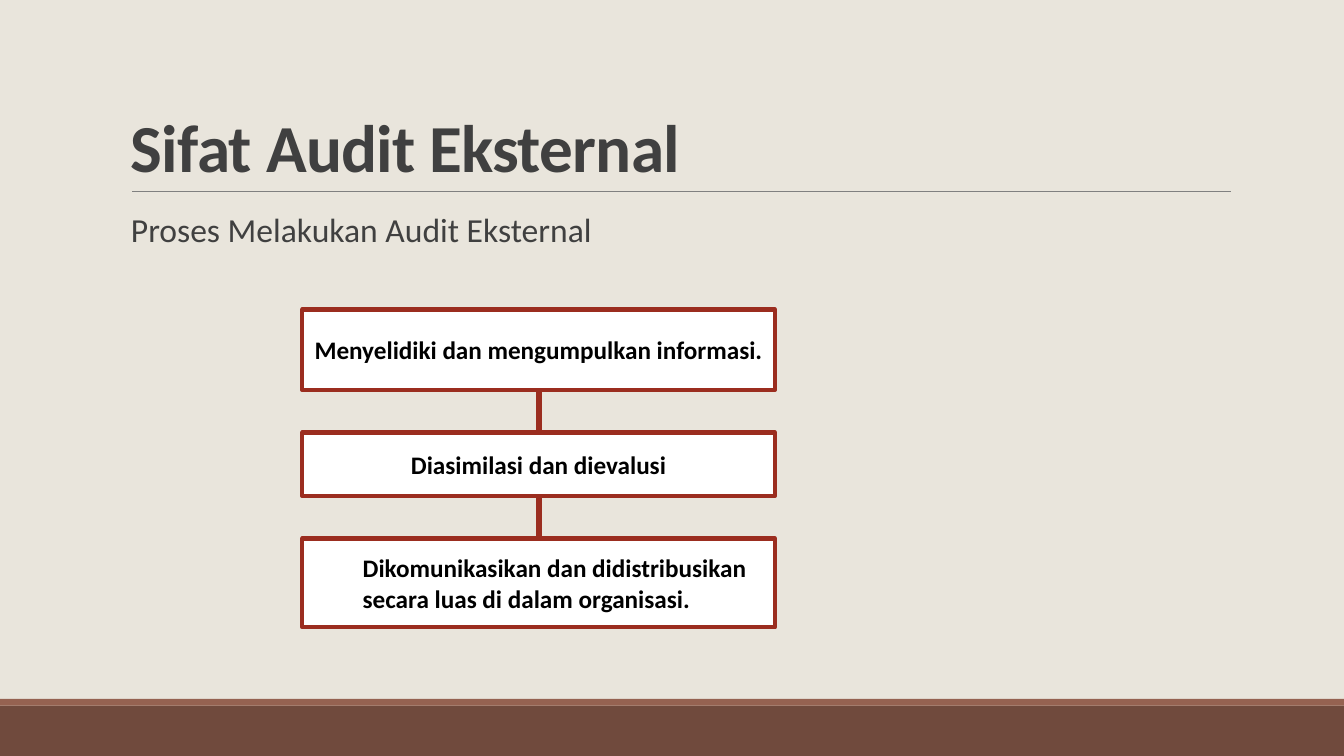
"""Build the slide on the process of an external audit."""
from lxml import etree
from pptx import Presentation
from pptx.dml.color import RGBColor
from pptx.enum.shapes import MSO_CONNECTOR, MSO_SHAPE
from pptx.enum.text import MSO_ANCHOR, PP_ALIGN
from pptx.oxml.ns import qn
from pptx.util import Cm, Pt

RECTANGLE = MSO_SHAPE.RECTANGLE
STRAIGHT = MSO_CONNECTOR.STRAIGHT
TOP, MIDDLE, BOTTOM = MSO_ANCHOR.TOP, MSO_ANCHOR.MIDDLE, MSO_ANCHOR.BOTTOM
LEFT, CENTER = PP_ALIGN.LEFT, PP_ALIGN.CENTER

TITLE = "Sifat Audit Eksternal"
SUBTITLE = "Proses Melakukan Audit Eksternal"
STEPS = [
    {"text": "Menyelidiki dan mengumpulkan informasi.", "height": 2.03, "align": CENTER, "indent": 0},
    {"text": "Diasimilasi dan dievalusi", "height": 1.6, "align": CENTER, "indent": 0},
    {"text": "Dikomunikasikan dan didistribusikan secara luas di dalam organisasi.",
     "height": 2.24, "align": LEFT, "indent": 1.27},
]

THEME = {
    "background": "E9E5DC", "footer": "704A3D", "footer_edge": "956251",
    "rule": "808080", "box": "FFFFFF", "accent": "9B2D1F",
    "title": {"name": "Calibri", "size": Pt(48), "bold": True, "color": "404040"},
    "subtitle": {"name": "Calibri", "size": Pt(24), "bold": False, "color": "404040"},
    "step": {"name": "Calibri", "size": Pt(18), "bold": True, "color": "000000"},
    "rule_width": 0.5, "box_width": 3, "link_width": 4.5,
}

SLIDE_WIDTH, SLIDE_HEIGHT = 33.87, 19.05
FOOTER_TOP, EDGE_HEIGHT = 17.78, 0.17
TEXT_LEFT, TEXT_WIDTH = 3.05, 27.94
RULE_LEFT, RULE_RIGHT, RULE_TOP = 3.33, 31.01, 4.83
STEP_LEFT, STEP_WIDTH, STEP_TOP, STEP_GAP = 7.62, 11.91, 7.8, 1.07


def color(name):
    return RGBColor.from_string(THEME[name])


def write_text(shape, text, style, anchor, align=LEFT, indent=0):
    frame = shape.text_frame
    frame.word_wrap = True
    frame.vertical_anchor = anchor
    paragraph = frame.paragraphs[0]
    paragraph.alignment = align
    paragraph._p.get_or_add_pPr().set("marL", str(Cm(indent)))
    run = paragraph.add_run()
    run.text = text
    for key, value in THEME[style].items():
        if key == "color":
            run.font.color.rgb = RGBColor.from_string(value)
        else:
            setattr(run.font, key, value)
    return paragraph, run


def add_text(slide, top, height, text, style, anchor):
    box = slide.shapes.add_textbox(Cm(TEXT_LEFT), Cm(top), Cm(TEXT_WIDTH), Cm(height))
    return write_text(box, text, style, anchor)


def add_rectangle(slide, left, top, width, height, fill, line=None):
    shape = slide.shapes.add_shape(RECTANGLE, Cm(left), Cm(top), Cm(width), Cm(height))
    shape.shadow.inherit = False
    shape.fill.solid()
    shape.fill.fore_color.rgb = color(fill)
    if line:
        shape.line.color.rgb = color(line)
        shape.line.width = Pt(THEME["box_width"])
    else:
        shape.line.fill.background()
    return shape


def add_line(slide, start, end, line, width):
    connector = slide.shapes.add_connector(STRAIGHT, *(Cm(value) for value in start + end))
    connector.line.color.rgb = color(line)
    connector.line.width = Pt(THEME[width])
    etree.SubElement(connector._element.spPr, qn("a:effectLst"))


def add_steps(slide):
    top = STEP_TOP
    center = STEP_LEFT + STEP_WIDTH / 2
    for index, step in enumerate(STEPS):
        if index:
            add_line(slide, (center, top - STEP_GAP), (center, top), "accent", "link_width")
        box = add_rectangle(slide, STEP_LEFT, top, STEP_WIDTH, step["height"], "box", "accent")
        write_text(box, step["text"], "step", MIDDLE, step["align"], step["indent"])
        top += step["height"] + STEP_GAP


def main():
    presentation = Presentation()
    presentation.slide_width = Cm(SLIDE_WIDTH)
    presentation.slide_height = Cm(SLIDE_HEIGHT)
    slide = presentation.slides.add_slide(presentation.slide_layouts[6])
    slide.background.fill.solid()
    slide.background.fill.fore_color.rgb = color("background")

    add_rectangle(slide, 0, FOOTER_TOP, SLIDE_WIDTH, SLIDE_HEIGHT - FOOTER_TOP, "footer")
    add_rectangle(slide, 0, FOOTER_TOP - EDGE_HEIGHT, SLIDE_WIDTH, EDGE_HEIGHT, "footer_edge")
    add_line(slide, (RULE_LEFT, RULE_TOP), (RULE_RIGHT, RULE_TOP), "rule", "rule_width")

    paragraph, run = add_text(slide, 0.79, 4.04, TITLE, "title", BOTTOM)
    paragraph.line_spacing = 0.85
    run.font._element.set("spc", "-50")
    add_text(slide, 5.13, 11.18, SUBTITLE, "subtitle", TOP)
    add_steps(slide)
    presentation.save("out.pptx")


if __name__ == "__main__":
    main()
